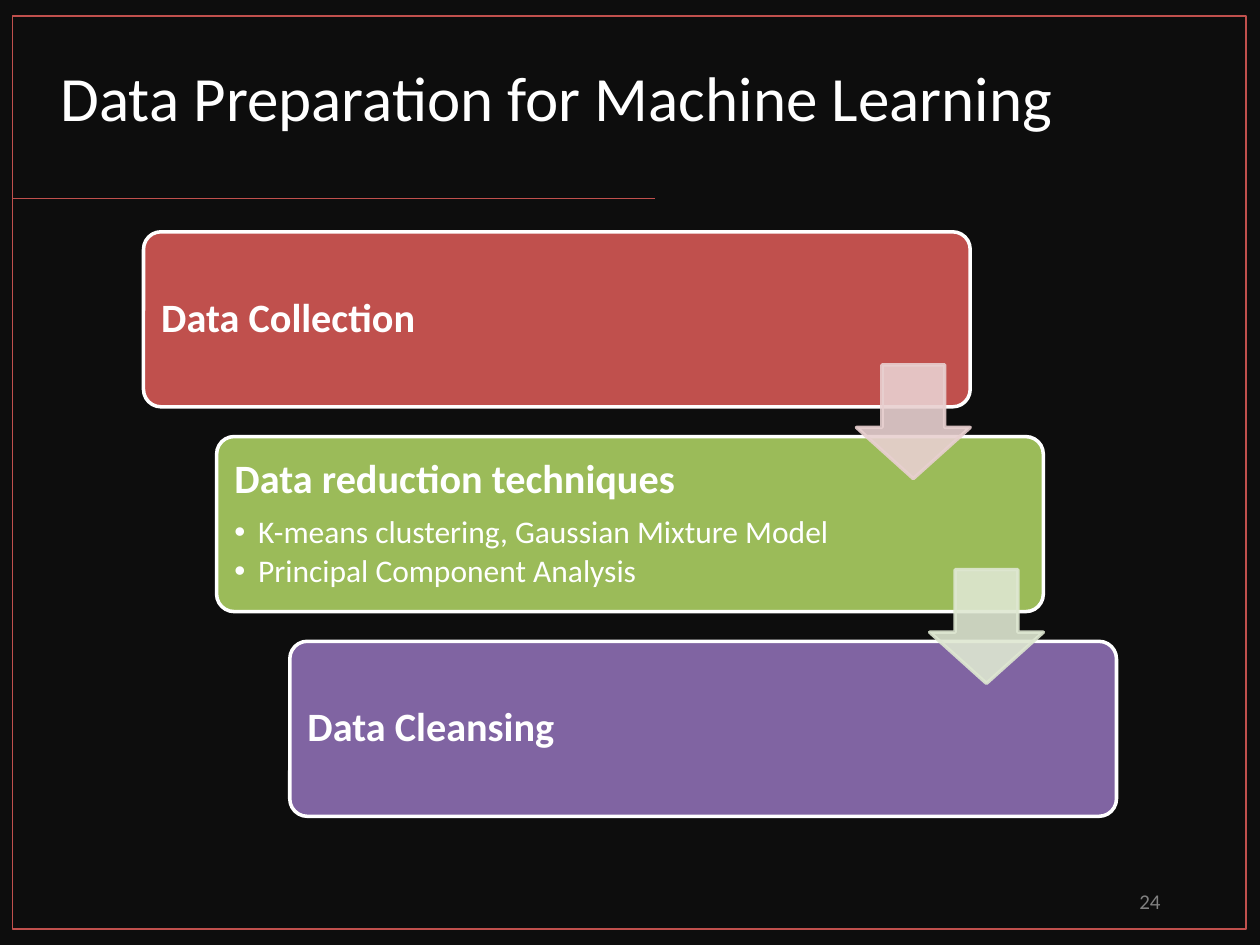
"""Build the data preparation slide with its three stepped bars."""
from lxml.etree import SubElement
from pptx import Presentation
from pptx.dml.color import RGBColor
from pptx.enum.shapes import MSO_CONNECTOR, MSO_SHAPE
from pptx.enum.text import MSO_ANCHOR, MSO_AUTO_SIZE, PP_ALIGN
from pptx.oxml.ns import qn
from pptx.util import Pt

HUES = {
    "back": "0D0D0D", "white": "FFFFFF", "gray": "808080",
    "red": "C0504D", "green": "9BBB59", "purple": "8064A2",
    "rose": "E8D0D0", "mint": "DEE7D1",
}
HEAD = {"size": Pt(23), "bold": True}
ITEM = {"size": Pt(18), "bold": False}
STEPS = [
    ("red", "Data Collection", []),
    ("green", "Data reduction techniques",
     ["K-means clustering, Gaussian Mixture Model",
      "Principal Component Analysis"]),
    ("purple", "Data Cleansing", []),
]
LEFT, TOP, WIDE, HIGH = 82, 132.5, 472.4, 100
SHIFT, DROP, SIDE = 41.8, 117, 65


def hue(name):
    return RGBColor.from_string(HUES[name])


def style(thing, vals):
    for key, val in vals.items():
        setattr(thing, key, val)


def place(shape, box):
    style(shape, dict(zip(("left", "top", "width", "height"), map(Pt, box))))


def write(para, text, font, form, tint="white"):
    style(para, {"space_before": Pt(0), **form})
    run = para.add_run()
    run.text = text
    style(run.font, {"name": "Calibri", **font})
    run.font.color.rgb = hue(tint)


def set_frame(shape, anchor, inset=None):
    frame = shape.text_frame
    style(frame, {"word_wrap": True, "auto_size": MSO_AUTO_SIZE.NONE,
                  "vertical_anchor": anchor})
    if inset is not None:
        sides = ("left", "top", "right", "bottom")
        style(frame, {f"margin_{side}": Pt(inset) for side in sides})
    return frame


def set_bullet(para, mark=None):
    props = para._p.get_or_add_pPr()
    dent = Pt(13.5) if mark else 0
    props.set("marL", str(dent))
    props.set("indent", str(-dent))
    if mark:
        SubElement(props, qn("a:buChar"), char=mark)
    else:
        SubElement(props, qn("a:buNone"))


def add_block(slide, kind, box, fill, line, width, adjust=(), alpha=None):
    shape = slide.shapes.add_shape(kind, *map(Pt, box))
    shape.shadow.inherit = False
    for spot, val in enumerate(adjust):
        shape.adjustments[spot] = val
    if fill:
        shape.fill.solid()
        shape.fill.fore_color.rgb = hue(fill)
    else:
        shape.fill.background()
    shape.line.width = Pt(width)
    shape.line.color.rgb = hue(line)
    if alpha:
        for tint in shape.element.spPr.iter(qn("a:srgbClr")):
            SubElement(tint, qn("a:alpha"), val=str(alpha * 1000))


def add_rule(slide, start, end, tint):
    rule = slide.shapes.add_connector(MSO_CONNECTOR.STRAIGHT, *map(Pt, start + end))
    rule.line.color.rgb = hue(tint)
    rule.line.width = Pt(1)
    SubElement(rule.element.spPr, qn("a:effectLst"))


def add_text(slide, box, head, items):
    if items:
        shape = slide.placeholders[1]
        slide.shapes._spTree.append(shape.element)
    else:
        shape = slide.shapes.add_textbox(0, 0, 0, 0)
    place(shape, box)
    frame = set_frame(shape, MSO_ANCHOR.MIDDLE, 7.2)
    form = {"line_spacing": 0.9, "space_after": Pt(8)}
    set_bullet(frame.paragraphs[0])
    write(frame.paragraphs[0], head, HEAD, form)
    for item in items:
        para = frame.add_paragraph()
        para.level = 1
        set_bullet(para, "•")
        write(para, item, ITEM, {**form, "space_after": Pt(2.7)})


def add_title(slide, text):
    place(slide.shapes.title, (24, 0, 588, 80.6))
    frame = set_frame(slide.shapes.title, MSO_ANCHOR.BOTTOM)
    write(frame.paragraphs[0], text, {"size": Pt(36)},
          {"alignment": PP_ALIGN.CENTER, "line_spacing": 0.9, "space_after": Pt(6)})


def add_number(slide, text):
    shape = slide.shapes.add_textbox(*map(Pt, (508.3, 500.4, 162, 28.8)))
    frame = set_frame(shape, MSO_ANCHOR.MIDDLE)
    write(frame.paragraphs[0], text, {"size": Pt(12)},
          {"alignment": PP_ALIGN.RIGHT, "space_after": Pt(6)}, "gray")


def main():
    deck = Presentation()
    style(deck, {"slide_width": Pt(720), "slide_height": Pt(540)})
    slide = deck.slides.add_slide(deck.slide_layouts[1])
    slide.background.fill.solid()
    slide.background.fill.fore_color.rgb = hue("back")

    add_title(slide, "Data Preparation for Machine Learning")
    add_rule(slide, (374.4, 113.5), (7.2, 113.5), "red")
    add_block(slide, MSO_SHAPE.RECTANGLE, (7.2, 9, 705, 522), None, "red", 1)
    add_number(slide, "24")

    for row, (fill, head, items) in enumerate(STEPS):
        left, top = LEFT + row * SHIFT, TOP + row * DROP
        add_block(slide, MSO_SHAPE.ROUNDED_RECTANGLE, (left, top, WIDE, HIGH),
                  fill, "white", 2, [0.1])
        add_text(slide, (left + 3, top + 3, 362, HIGH - 6), head, items)
    for row, fill in enumerate(("rose", "mint")):
        left = LEFT + row * SHIFT + WIDE - SIDE
        add_block(slide, MSO_SHAPE.DOWN_ARROW,
                  (left, TOP + row * DROP + 76, SIDE, SIDE),
                  fill, fill, 2, [0.55, 0.45], 90)
    deck.save("out.pptx")


if __name__ == "__main__":
    main()
